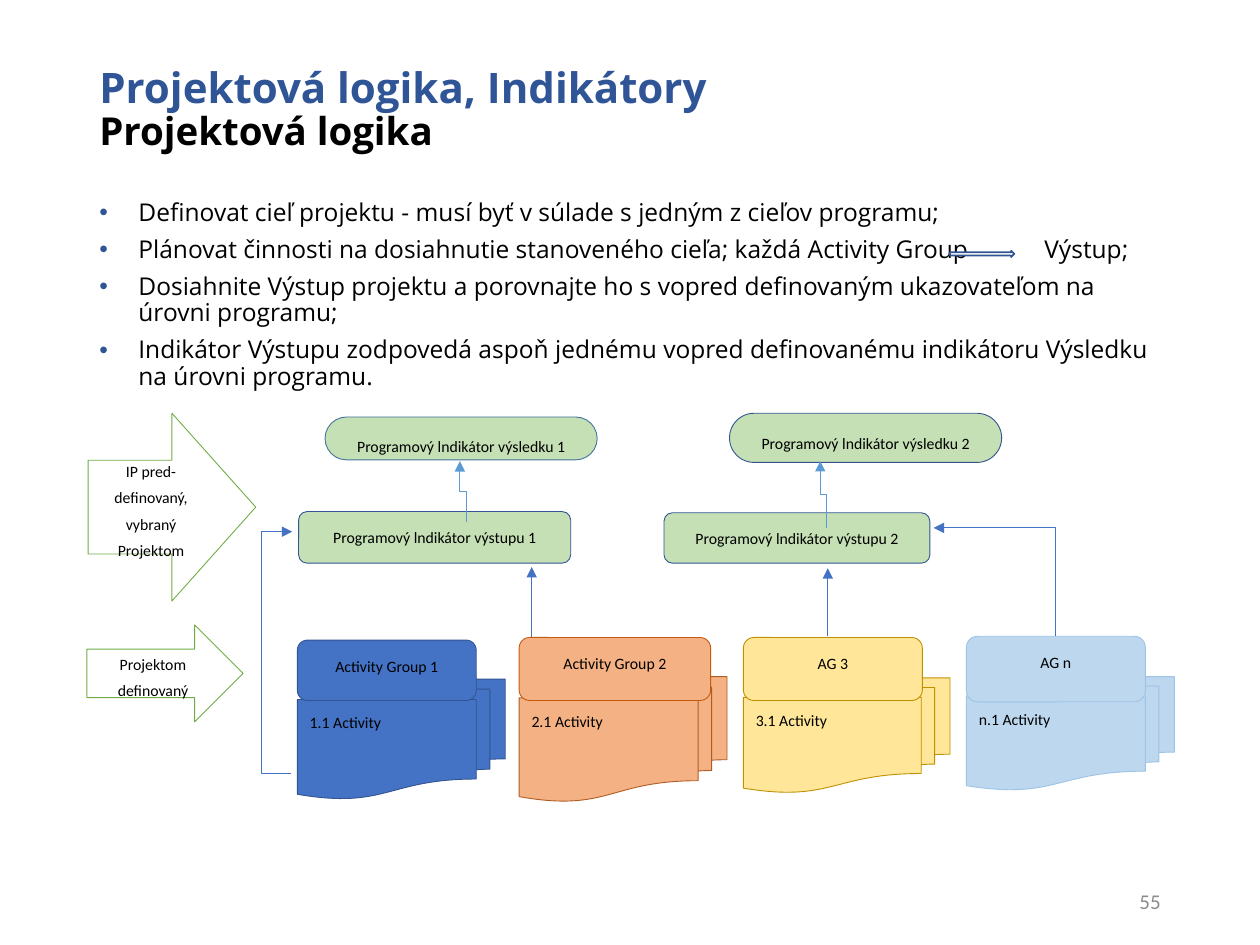
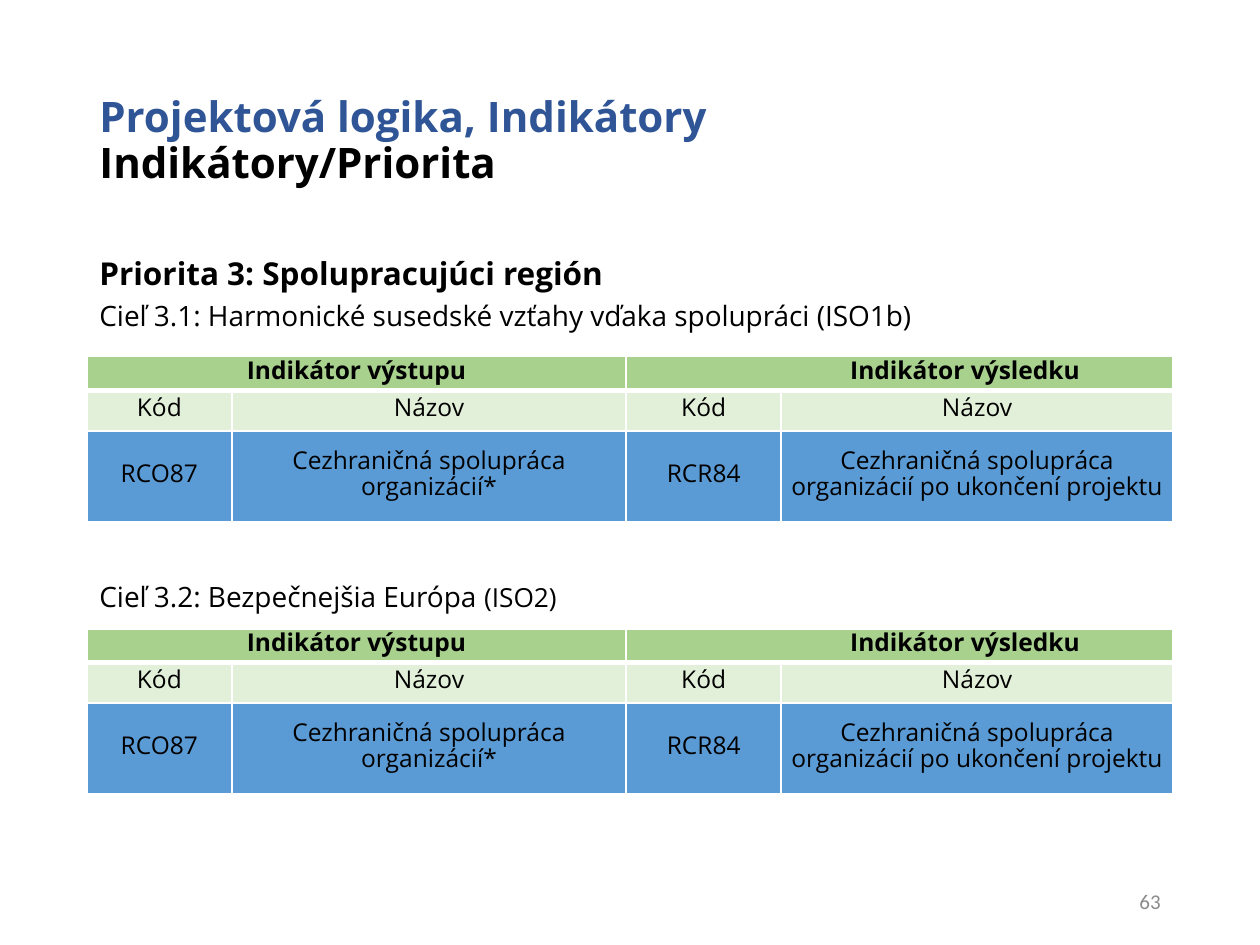
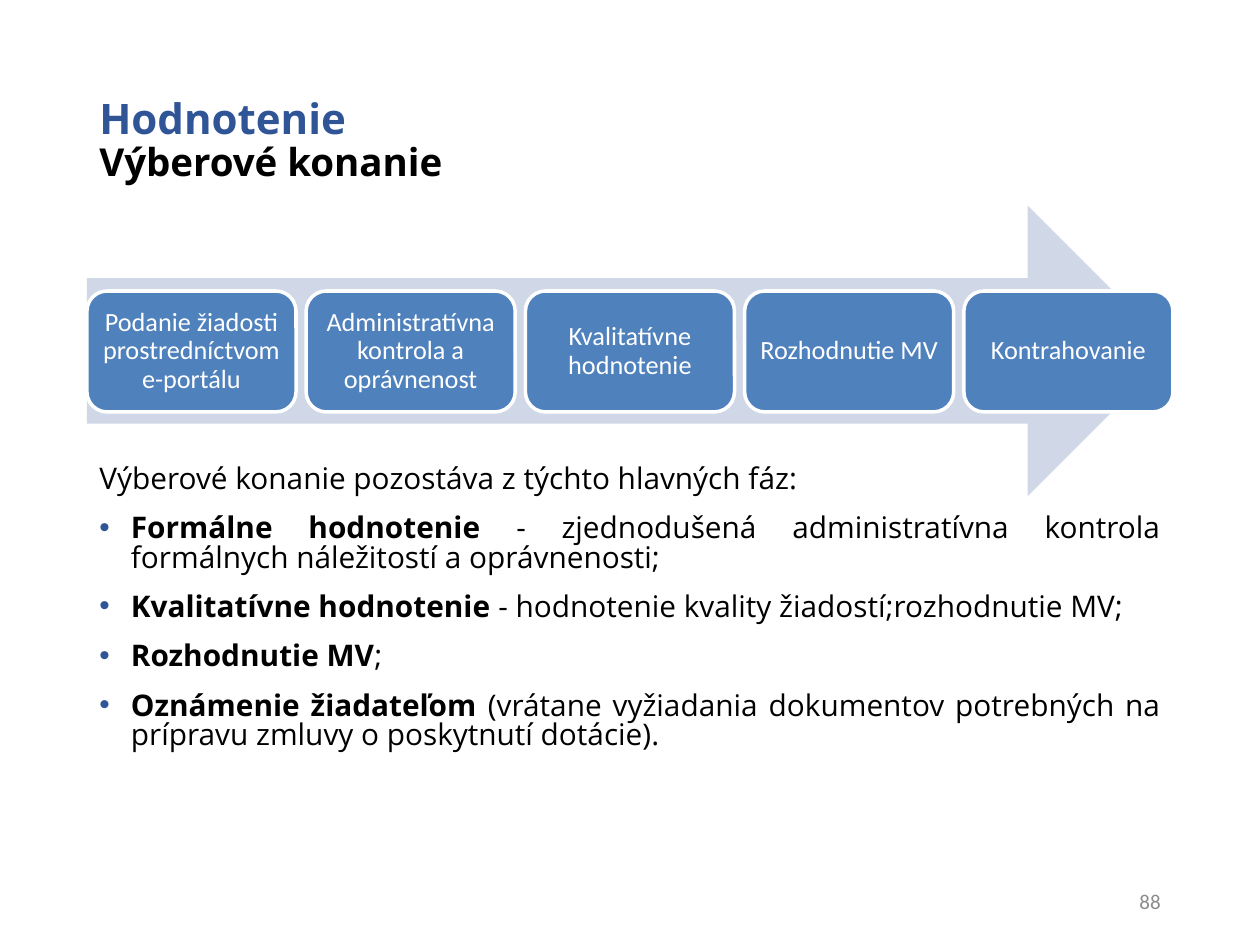
from lxml import etree
from pptx import Presentation
from pptx import util as u
from pptx.dml.color import RGBColor
from pptx.enum import shapes, text
from pptx.oxml.ns import qn

Inches, Pt = u.Inches, u.Pt
Shape, Line = shapes.MSO_SHAPE, shapes.MSO_CONNECTOR
Align, Anchor = text.PP_ALIGN, text.MSO_ANCHOR

HEADING, BODY = "Open Sans", "Calibri"
NAVY, BLACK, WHITE, GRAY = "2F5597", "000000", "FFFFFF", "8C8C8C"
OUTLINE, ARROW, LIGHT_ARROW = "325491", "4472C4", "5B9BD5"
MINT, GREEN = "C5E0B4", "70AD47"
LEFT, WIDTH = 0.69, 8.62


def color(value):
    return RGBColor.from_string(value)


def write(frame, paragraphs, size=14, font=BODY, ink=BLACK, bold=False, align=Align.LEFT,
          anchor=Anchor.TOP, spacing=None, before=0, bullet=0, inset=None):
    """Fill a text frame.

    A paragraph is a string or a list of (string, changes) spans; changes may
    hold size, ink and bold. A newline in a span is a line break. bullet is
    the hanging indent in inches; 0 means no bullet.
    """
    frame.word_wrap = True
    frame.vertical_anchor = anchor
    if inset is not None:
        frame.margin_left = frame.margin_right = Inches(inset)
        frame.margin_top = frame.margin_bottom = Inches(inset)
    for index, spans in enumerate(paragraphs):
        para = frame.paragraphs[0] if index == 0 else frame.add_paragraph()
        spans = [(spans, {})] if isinstance(spans, str) else spans
        para.alignment = align
        if spacing:
            para.line_spacing = spacing
        if index:
            para.space_before = Pt(before)
        if bullet and not (spans[0][1].get("plain")):
            add_bullet(para, bullet)
        for content, changes in spans:
            for part, line in enumerate(content.split("\n")):
                if part:
                    para.add_line_break()
                if not line:
                    continue
                span = para.add_run()
                span.text = line
                span.font.name = font
                span.font.size = Pt(changes.get("size", size))
                span.font.bold = changes.get("bold", bold)
                span.font.color.rgb = color(changes.get("ink", ink))


def add_bullet(para, indent):
    properties = para._p.get_or_add_pPr()
    properties.set("marL", str(Inches(indent)))
    properties.set("indent", str(-Inches(indent)))
    properties.set("defTabSz", str(Inches(0.5)))
    tint = etree.SubElement(properties, qn("a:buClr"))
    etree.SubElement(tint, qn("a:srgbClr"), val=NAVY)
    etree.SubElement(properties, qn("a:buFont"), typeface="Arial")
    etree.SubElement(properties, qn("a:buChar"), char="•")


def add_border(cell, side, width):
    line = etree.SubElement(cell._tc.get_or_add_tcPr(), qn(f"a:ln{side}"), w=str(Pt(width)))
    fill = etree.SubElement(line, qn("a:solidFill"))
    etree.SubElement(fill, qn("a:srgbClr"), val=WHITE)


class Builder:
    """Holds the deck, its shared style and the current page."""

    def __init__(self):
        self.deck = Presentation()
        self.deck.slide_width, self.deck.slide_height = Inches(10), Inches(7.5)
        self.page = None

    def start(self, title, subtitle, number, height=1.45, subtitle_size=22):
        self.page = self.deck.slides.add_slide(self.deck.slide_layouts[6])
        heading = [(title + "\n", {"ink": NAVY}), (subtitle, {"size": subtitle_size})]
        self.text(LEFT, 0.4, WIDTH, height, [heading], size=24, font=HEADING, bold=True,
                  anchor=Anchor.MIDDLE, spacing=0.9)
        self.text(7.06, 6.95, 2.25, 0.4, [str(number)], size=12, ink=GRAY,
                  align=Align.RIGHT, anchor=Anchor.MIDDLE)

    def text(self, left, top, width, height, paragraphs, **style):
        box = self.page.shapes.add_textbox(*map(Inches, (left, top, width, height)))
        write(box.text_frame, paragraphs, **style)

    def shape(self, kind, left, top, width, height, fill, line=None, weight=0.5, label=None,
              adjust=None, **style):
        shape = self.page.shapes.add_shape(kind, *map(Inches, (left, top, width, height)))
        shape.shadow.inherit = False
        shape.fill.solid()
        shape.fill.fore_color.rgb = color(fill)
        if line:
            shape.line.color.rgb = color(line)
            shape.line.width = Pt(weight)
        else:
            shape.line.fill.background()
        if adjust is not None:
            shape.adjustments[0] = adjust
        if label:
            write(shape.text_frame, [label], **style)

    def label(self, kind, left, top, width, height, fill, line, label, align=Align.CENTER, **style):
        """Diagram shape with small text on fixed 15 pt lines."""
        self.shape(kind, left, top, width, height, fill, line, label=label, size=9,
                   align=align, spacing=Pt(15), **style)

    def arrow(self, x1, y1, x2, y2, ink=ARROW, kind=Line.STRAIGHT):
        arrow = self.page.shapes.add_connector(kind, *map(Inches, (x1, y1, x2, y2)))
        arrow.line.color.rgb = color(ink)
        arrow.line.width = Pt(0.5)
        etree.SubElement(arrow.line._get_or_add_ln(), qn("a:tailEnd"), type="triangle")
        etree.SubElement(arrow._element.spPr, qn("a:effectLst"))
        return arrow

    def side_arrow(self, x1, y1, x2, y2, bend):
        """Elbow that leaves and arrives sideways; bend is in widths from its left."""
        arrow = self.arrow(x1, y1, x2, y2, kind=Line.ELBOW)
        guides = arrow._element.spPr.find(qn("a:prstGeom")).find(qn("a:avLst"))
        etree.SubElement(guides, qn("a:gd"), name="adj1", fmla=f"val {bend * 100000}")

    def rising_arrow(self, x1, y1, x2, y2, ink=ARROW, corner=False):
        """Elbow that starts upwards and ends to the left: a flat one turned by 270°."""
        middle_x, middle_y = (x1 + x2) / 2, (y1 + y2) / 2
        rise, run = (y1 - y2) / 2, (x1 - x2) / 2
        arrow = self.arrow(middle_x - rise, middle_y + run, middle_x + rise, middle_y - run,
                           ink, Line.ELBOW)
        properties = arrow._element.spPr
        properties.find(qn("a:xfrm")).set("rot", str(270 * 60000))
        if corner:
            properties.find(qn("a:prstGeom")).set("prst", "bentConnector2")

    def table(self, top, rows, fills, columns, heights):
        """Table whose first row has headings that each span two columns."""
        frame = self.page.shapes.add_table(len(rows), len(columns), Inches(LEFT), Inches(top),
                                           Inches(sum(columns)), Inches(sum(heights)))
        table = frame.table
        for column, width in zip(table.columns, columns):
            column.width = Inches(width)
        for row, height in zip(table.rows, heights):
            row.height = Inches(height)
        for column in (0, 2):
            table.cell(0, column).merge(table.cell(0, column + 1))
        for r, row in enumerate(rows):
            for c, content in enumerate(row):
                cell = table.cell(r, c)
                for side in "LRTB":
                    heavy = (r, side) in ((0, "B"), (1, "T"))
                    add_border(cell, side, 3 if heavy else 1)
                cell.fill.solid()
                cell.fill.fore_color.rgb = color(fills[r])
                cell.margin_left = cell.margin_right = Inches(0.04)
                cell.margin_top = cell.margin_bottom = 0
                cell.vertical_anchor = Anchor.MIDDLE
                if content:
                    write(cell.text_frame, [content], font=HEADING, bold=r == 0,
                          align=Align.CENTER, spacing=Pt(15), anchor=Anchor.MIDDLE)
        table.cell(0, 2).margin_left = Inches(1.08)


def project_logic(builder):
    builder.start("Projektová logika, Indikátory", "Projektová logika", 55, height=0.95)
    builder.side_arrow(2.31, 6.14, 2.32, 4.22, bend=-24)
    builder.arrow(4.22, 5.23, 4.22, 4.5)

    groups = [
        # left, top, width, height of the stack; top, width, height of its header
        ((2.36, 5.39, 1.65, 0.95), (5.08, 1.42, 0.48), "4472C4", OUTLINE, OUTLINE,
         "Activity Group 1", "1.1 Activity"),
        ((4.12, 5.37, 1.65, 0.99), (5.06, 1.52, 0.5), "F4B183", "AF5C24", "C55A11",
         "Activity Group 2", "2.1 Activity"),
        ((5.9, 5.38, 1.64, 0.91), (5.06, 1.42, 0.5), "FFE699", "BF9000", "BF9000",
         "AG 3", "3.1 Activity"),
        ((7.67, 5.37, 1.65, 0.9), (5.05, 1.42, 0.52), "BDD7EE", "9DC3E6", "9DC3E6",
         "AG n", "n.1 Activity"),
    ]
    for stack, header, fill, stack_line, header_line, group, activity in groups:
        builder.label(Shape.FLOWCHART_MULTIDOCUMENT, *stack, fill, stack_line, activity,
                      align=Align.JUSTIFY)
        builder.label(Shape.ROUNDED_RECTANGLE, stack[0], *header, fill, header_line, group)

    indicators = [
        ((5.27, 4.07, 2.11, 0.4), OUTLINE, None, "Programový lndikátor výstupu 2"),
        ((2.37, 4.06, 2.16, 0.41), OUTLINE, None, "Programový lndikátor výstupu 1"),
        ((2.58, 3.31, 2.16, 0.34), "43739E", 0.5, "Programový lndikátor výsledku 1"),
        ((5.79, 3.28, 2.16, 0.39), OUTLINE, 0.5, "Programový lndikátor výsledku 2"),
    ]
    for place, line, roundness, name in indicators:
        builder.label(Shape.ROUNDED_RECTANGLE, *place, MINT, line, name, adjust=roundness)

    for place, note in (((0.7, 3.28, 1.33, 1.49), "IP pred-definovaný, vybraný Projektom"),
                        ((0.69, 4.96, 1.24, 0.77), "Projektom definovaný")):
        builder.label(Shape.RIGHT_ARROW, *place, WHITE, GREEN, note, anchor=Anchor.MIDDLE)

    builder.rising_arrow(8.38, 5.05, 7.41, 4.19, corner=True)
    builder.arrow(6.57, 5.05, 6.57, 4.51)
    builder.rising_arrow(3.7, 4.14, 3.65, 3.66, LIGHT_ARROW)
    builder.rising_arrow(6.56, 4.19, 6.51, 3.66, LIGHT_ARROW)

    builder.text(LEFT, 1.54, WIDTH, 1.77, [
        "Definovat cieľ projektu - musí byť v súlade s jedným z cieľov programu;",
        "Plánovat činnosti na dosiahnutie stanoveného cieľa; každá Activity Group\t\tVýstup;",
        "Dosiahnite Výstup projektu a porovnajte ho s vopred definovaným ukazovateľom na "
        "úrovni programu;",
        "Indikátor Výstupu zodpovedá aspoň jednému vopred definovanému indikátoru Výsledku "
        "na úrovni programu.",
    ], font=HEADING, spacing=0.9, before=6, bullet=0.31)
    builder.shape(Shape.RIGHT_ARROW, 7.54, 1.99, 0.51, 0.05, WHITE, OUTLINE, weight=1)


def priority_indicators(builder):
    builder.start("Projektová logika, Indikátory", "Indikátory/Priorita", 63, subtitle_size=24)
    style = {"size": 16, "font": HEADING, "spacing": 0.9, "before": 6}
    builder.text(LEFT, 2, WIDTH, 0.8, [
        [("Priorita 3: Spolupracujúci región", {"size": 18, "bold": True})],
        "Cieľ 3.1: Harmonické susedské vzťahy vďaka spolupráci (ISO1b)",
    ], **style)
    builder.text(LEFT, 4.58, WIDTH, 0.4, [
        [("Cieľ 3.2: Bezpečnejšia Európa ", {}), ("(ISO2)", {"size": 15})],
    ], **style)
    rows = [
        ["Indikátor výstupu", "", "Indikátor výsledku", ""],
        ["Kód", "Názov"] * 2,
        ["RCO87", "Cezhraničná spolupráca organizácií*",
         "RCR84", "Cezhraničná spolupráca organizácií po ukončení projektu"],
    ]
    for top in (2.83, 4.99):
        builder.table(top, rows, fills=["A9D18E", "E2F0D9", "5B9BD5"],
                      columns=[1.15, 3.13, 1.23, 3.11], heights=[0.27, 0.32, 0.72])


def selection_process(builder):
    builder.start("Hodnotenie", "Výberové konanie", 88)
    strong = {"bold": True}
    builder.text(LEFT, 3.65, WIDTH, 3.1, [
        [("Výberové konanie pozostáva z týchto hlavných fáz:", {"plain": True})],
        [("Formálne hodnotenie ", strong),
         ("- zjednodušená administratívna kontrola formálnych náležitostí a oprávnenosti;", {})],
        [("Kvalitatívne hodnotenie", strong),
         (" - hodnotenie kvality žiadostí;rozhodnutie MV;", {})],
        [("Rozhodnutie MV", strong), (";", {})],
        [("Oznámenie žiadateľom ", strong),
         ("(vrátane vyžiadania dokumentov potrebných na prípravu zmluvy o poskytnutí dotácie).",
          {})],
    ], size=17, font=HEADING, align=Align.JUSTIFY, spacing=0.82, before=11.5, bullet=0.25)

    builder.shape(Shape.RIGHT_ARROW, LEFT, 1.63, WIDTH, 2.31, "D0D8E8")
    steps = ["Podanie žiadosti prostredníctvom e-portálu", "Administratívna kontrola a oprávnenost",
             "Kvalitatívne hodnotenie", "Rozhodnutie MV", "Kontrahovanie"]
    for index, step in enumerate(steps):
        builder.shape(Shape.ROUNDED_RECTANGLE, LEFT + 1.74 * index, 2.31, 1.66, 0.96, "4F81BD",
                      WHITE, weight=2, label=step, size=15, ink=WHITE, align=Align.CENTER,
                      anchor=Anchor.MIDDLE, spacing=0.9, inset=0.06)


def main():
    builder = Builder()
    project_logic(builder)
    priority_indicators(builder)
    selection_process(builder)
    builder.deck.save("out.pptx")


if __name__ == "__main__":
    main()
